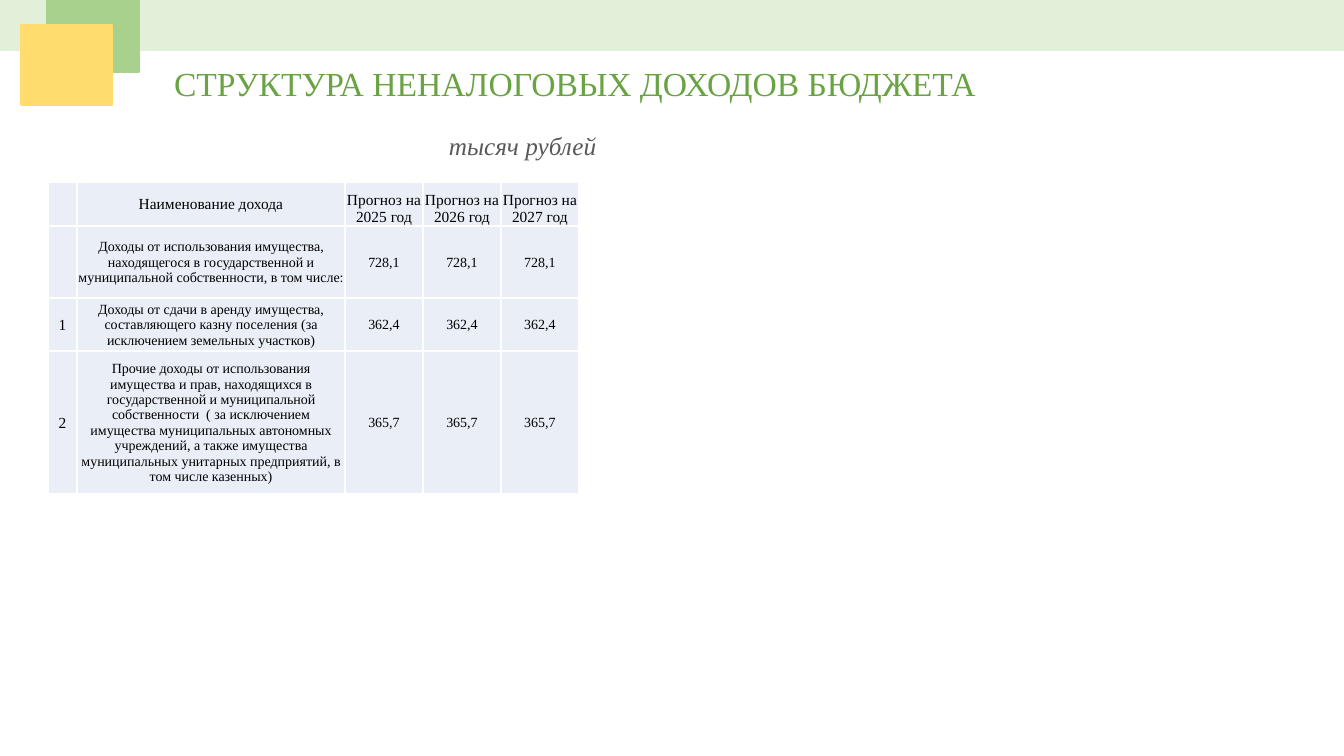
from lxml.etree import SubElement
from pptx import Presentation
from pptx.dml.color import RGBColor
from pptx.enum.shapes import MSO_SHAPE
from pptx.enum.text import MSO_ANCHOR, MSO_AUTO_SIZE, PP_ALIGN
from pptx.oxml.ns import qn
from pptx.util import Pt

PX = 914400 / 100.8
FONT = "Times New Roman"
GREEN = RGBColor(0x6A, 0xA3, 0x43)
GREY = RGBColor(0x59, 0x59, 0x59)
BLACK = RGBColor(0, 0, 0)
CELL_FILL = RGBColor(0xEA, 0xEF, 0xF7)
PALE_GREEN = RGBColor(0xE2, 0xF0, 0xD9)
MID_GREEN = RGBColor(0xA9, 0xD1, 0x8E)
YELLOW = RGBColor(0xFF, 0xDC, 0x6D)

TITLE = "СТРУКТУРА НЕНАЛОГОВЫХ ДОХОДОВ БЮДЖЕТА"
UNITS = "тысяч рублей"
YEARS = (2025, 2026, 2027)
INCOMES = [  # number, name, forecast for each year
    ("", "Доходы от использования имущества, находящегося в государственной и "
     "муниципальной собственности, в том числе:", ("728,1", "728,1", "728,1")),
    ("1", "Доходы от сдачи в аренду имущества, составляющего казну поселения "
     "(за исключением земельных участков)", ("362,4", "362,4", "362,4")),
    ("2", "Прочие доходы от использования имущества и прав, находящихся в "
     "государственной и муниципальной собственности  ( за исключением имущества "
     "муниципальных автономных учреждений, а также имущества муниципальных "
     "унитарных предприятий, в том числе казенных)", ("365,7", "365,7", "365,7")),
]
DECOR = [  # left, top, width, height, colour
    (0, 0, 1344, 50, PALE_GREEN),
    (47, 0, 92, 72, MID_GREEN),
    (21, 25, 91, 80, YELLOW),
]
TABLE_LEFT, TABLE_TOP = 48, 182
COLUMNS = [29, 268] + [78] * len(YEARS)
ROWS = [44, 72, 53, 143]


def px(*values):
    return [round(v * PX) for v in values]


def write(tf, text, size, color, align=PP_ALIGN.LEFT):
    tf.text = text
    p = tf.paragraphs[0]
    p.alignment = align
    p.font.size = Pt(size)
    p.font.name = FONT
    p.font.color.rgb = color
    return p


def write_line(sp, text, size, color):
    tf = sp.text_frame
    tf.word_wrap = False
    tf.auto_size = MSO_AUTO_SIZE.SHAPE_TO_FIT_TEXT
    tf.vertical_anchor = MSO_ANCHOR.TOP
    return write(tf, text, size, color)


def add_borders(cell):
    tc_pr = cell._tc.get_or_add_tcPr()
    for i, side in enumerate(("a:lnL", "a:lnR", "a:lnT", "a:lnB")):
        ln = SubElement(tc_pr, qn(side), w=str(Pt(1)))
        fill = SubElement(ln, qn("a:solidFill"))
        SubElement(fill, qn("a:srgbClr"), val="FFFFFF")
        tc_pr.insert(i, ln)


prs = Presentation()
prs.slide_width, prs.slide_height = px(1344, 756)
s = prs.slides.add_slide(prs.slide_layouts[5])

# Title
title = s.shapes.title
title.left, title.top, title.width, title.height = px(164, 58, 831, 50)
write_line(title, TITLE, 24, GREEN)

# Band and corner squares
for *box, color in DECOR:
    sp = s.shapes.add_shape(MSO_SHAPE.RECTANGLE, *px(*box))
    sp.shadow.inherit = False
    sp.fill.solid()
    sp.fill.fore_color.rgb = color
    sp.line.color.rgb = color
    sp.line.width = Pt(1)

# Units
units = s.shapes.add_textbox(*px(439, 125, 169, 40))
write_line(units, UNITS, 18, GREY).font.italic = True

# Income table
header = ["", "Наименование дохода"] + [f"Прогноз на {year} год" for year in YEARS]
lines = [header] + [[number, name, *values] for number, name, values in INCOMES]
table = s.shapes.add_table(
    len(ROWS), len(COLUMNS),
    *px(TABLE_LEFT, TABLE_TOP, sum(COLUMNS), sum(ROWS))).table
for column, width in zip(table.columns, px(*COLUMNS)):
    column.width = width
for row, height in zip(table.rows, px(*ROWS)):
    row.height = height
for i, line in enumerate(lines):
    for j, text in enumerate(line):
        cell = table.cell(i, j)
        cell.fill.solid()
        cell.fill.fore_color.rgb = CELL_FILL
        cell.margin_left, cell.margin_right, cell.margin_top = px(1, 1, 1)
        cell.margin_bottom = 0
        year_head = i == 0 and j > 1
        cell.vertical_anchor = MSO_ANCHOR.BOTTOM if year_head else MSO_ANCHOR.MIDDLE
        size = 11 if i == 0 or j == 0 else 10
        p = write(cell.text_frame, text, size, BLACK, PP_ALIGN.CENTER)
        p.font.bold = False
        add_borders(cell)

prs.save("out.pptx")
